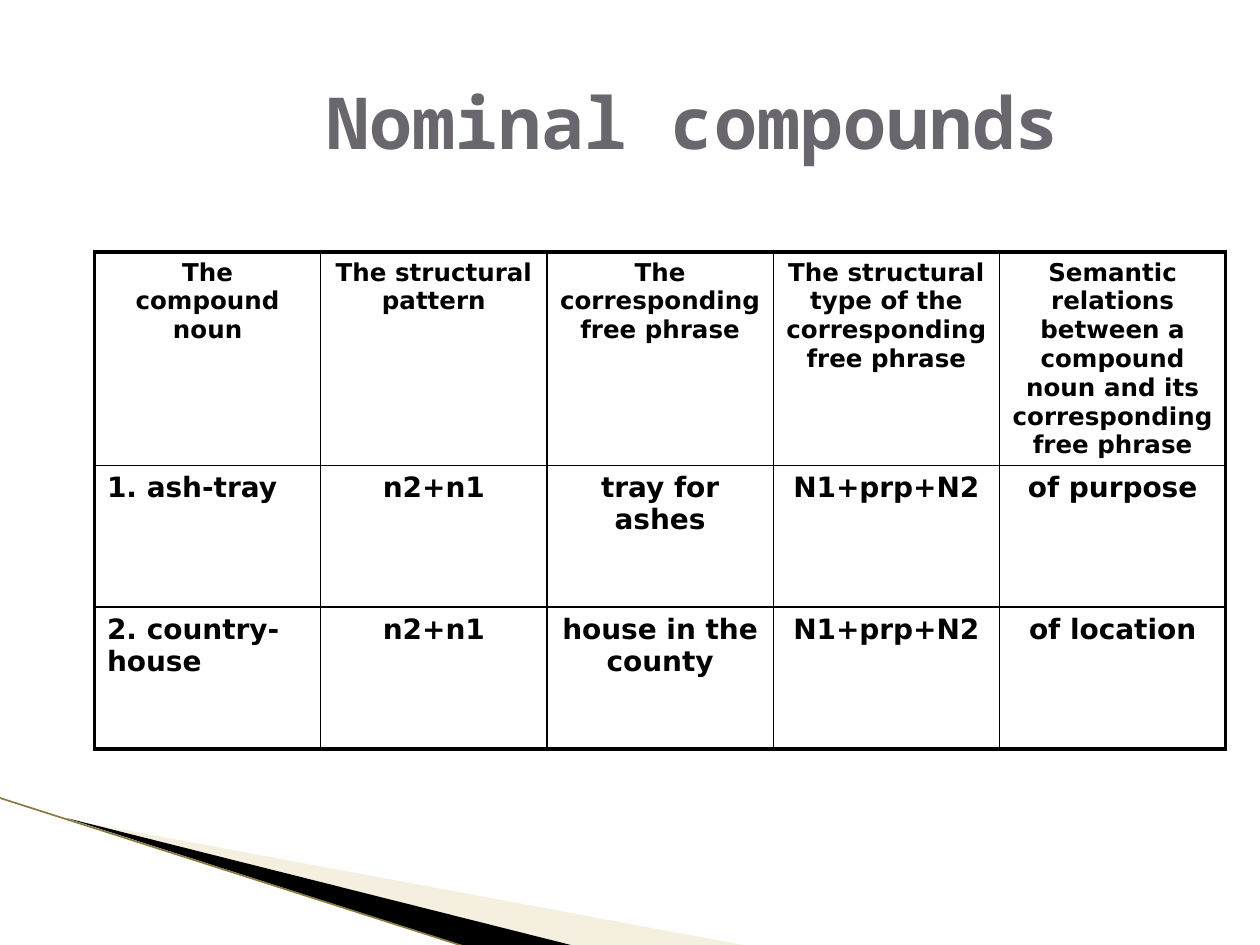
"""Build the slide on nominal compounds: a title, a bordered table and a corner ornament."""
import pptx
import pptx.dml.color
import pptx.enum.shapes
import pptx.enum.text
import pptx.oxml
import pptx.oxml.ns
import pptx.util
from lxml import etree

Pt = pptx.util.Pt
RGB = pptx.dml.color.RGBColor.from_string
ALIGN = pptx.enum.text.PP_ALIGN
COLORS = {"ink": "000000", "title": "69676D", "sand": "E4D7AD", "edge": "8A7A40"}


def write_text(frame, text, font="DejaVu Sans", size=14, color="ink", align=ALIGN.CENTER):
    frame.word_wrap = True
    para = frame.paragraphs[0]
    para.alignment = align
    span = para.add_run()
    span.text = text
    span.font.name = font
    span.font.size = Pt(size)
    span.font.bold = True
    span.font.color.rgb = RGB(COLORS[color])


def add_border(cell, side, width):
    properties = cell._tc.get_or_add_tcPr()
    border = etree.SubElement(properties, pptx.oxml.ns.qn(f"a:ln{side}"), w=str(Pt(width)))
    fill = etree.SubElement(border, pptx.oxml.ns.qn("a:solidFill"))
    etree.SubElement(fill, pptx.oxml.ns.qn("a:srgbClr"), val=COLORS["ink"])


deck = pptx.Presentation()
deck.slide_width, deck.slide_height = Pt(720), Pt(540)
page = deck.slides.add_slide(deck.slide_layouts[6])

wedges = [
    ("sand", 40, (56.2, 393.8, 299.5, 113.8), [(39.6, 468.4), (428.4, 540.7), (328.3, 540.7)]),
    ("ink", 100, (-4.3, 455.8, 299.5, 66.2), [(38.2, 467.5), (329, 540.7), (267.8, 541.4)]),
]
for color, opacity, frame, corners in wedges:
    points = [(Pt(x), Pt(y)) for x, y in corners]
    builder = page.shapes.build_freeform(*points[0])
    builder.add_line_segments(points[1:], close=True)
    wedge = builder.convert_to_shape()
    left, top, width, height = [Pt(length) for length in frame]
    shift_x, shift_y = wedge.left - left, wedge.top - top
    for outline in wedge._element.iter(pptx.oxml.ns.qn("a:path")):
        outline.set("w", str(width))
        outline.set("h", str(height))
    for corner in wedge._element.iter(pptx.oxml.ns.qn("a:pt")):
        corner.set("x", str(int(corner.get("x")) + shift_x))
        corner.set("y", str(int(corner.get("y")) + shift_y))
    wedge.left, wedge.top, wedge.width, wedge.height = left, top, width, height
    wedge.shadow.inherit = False
    wedge.fill.solid()
    wedge.fill.fore_color.rgb = RGB(COLORS[color])
    wedge.line.fill.background()
    if opacity < 100:
        tint = wedge.fill._xPr.find(".//" + pptx.oxml.ns.qn("a:srgbClr"))
        etree.SubElement(tint, pptx.oxml.ns.qn("a:alpha"), val=str(opacity * 1000))

edge = page.shapes.add_connector(
    pptx.enum.shapes.MSO_CONNECTOR.STRAIGHT, Pt(-0.7), Pt(455.8), Pt(267.1), Pt(541.4))
edge.line.color.rgb = RGB(COLORS["edge"])
edge.line.width = Pt(0.95)
etree.SubElement(edge._element.spPr, pptx.oxml.ns.qn("a:effectLst"))

title = page.shapes.add_textbox(Pt(108), Pt(24), Pt(576), Pt(90))
title.text_frame.vertical_anchor = pptx.enum.text.MSO_ANCHOR.MIDDLE
write_text(title.text_frame, "Nominal compounds", font="Noto Sans Mono", size=41, color="title")

rows = [
    ["The compound noun", "The structural pattern", "The corresponding free phrase",
     "The structural type of the corresponding free phrase",
     "Semantic relations between a compound noun and its corresponding free phrase"],
    ["1. ash-tray", "n2+n1", "tray for ashes", "N1+prp+N2", "of purpose"],
    ["2. country-house", "n2+n1", "house in the county", "N1+prp+N2", "of location"],
]
heights = [122, 81, 81]
last_row, last_column = len(rows) - 1, len(rows[0]) - 1
table = page.shapes.add_table(
    len(rows), len(rows[0]), Pt(54), Pt(144), Pt(646.5), Pt(sum(heights))).table
table.first_row = table.horz_banding = False
for column in table.columns:
    column.width = Pt(129.3)
for r, texts in enumerate(rows):
    table.rows[r].height = Pt(heights[r])
    for c, text in enumerate(texts):
        cell = table.cell(r, c)
        cell.margin_bottom = Pt(0)
        outer = {"L": c == 0, "R": c == last_column, "T": r == 0, "B": r == last_row}
        for side, is_outer in outer.items():
            add_border(cell, side, 2.25 if is_outer else 1)
        cell.fill.background()
        write_text(cell.text_frame, text, size=16 if r else 14,
                   align=ALIGN.LEFT if r and c == 0 else ALIGN.CENTER)

deck.save("out.pptx")
